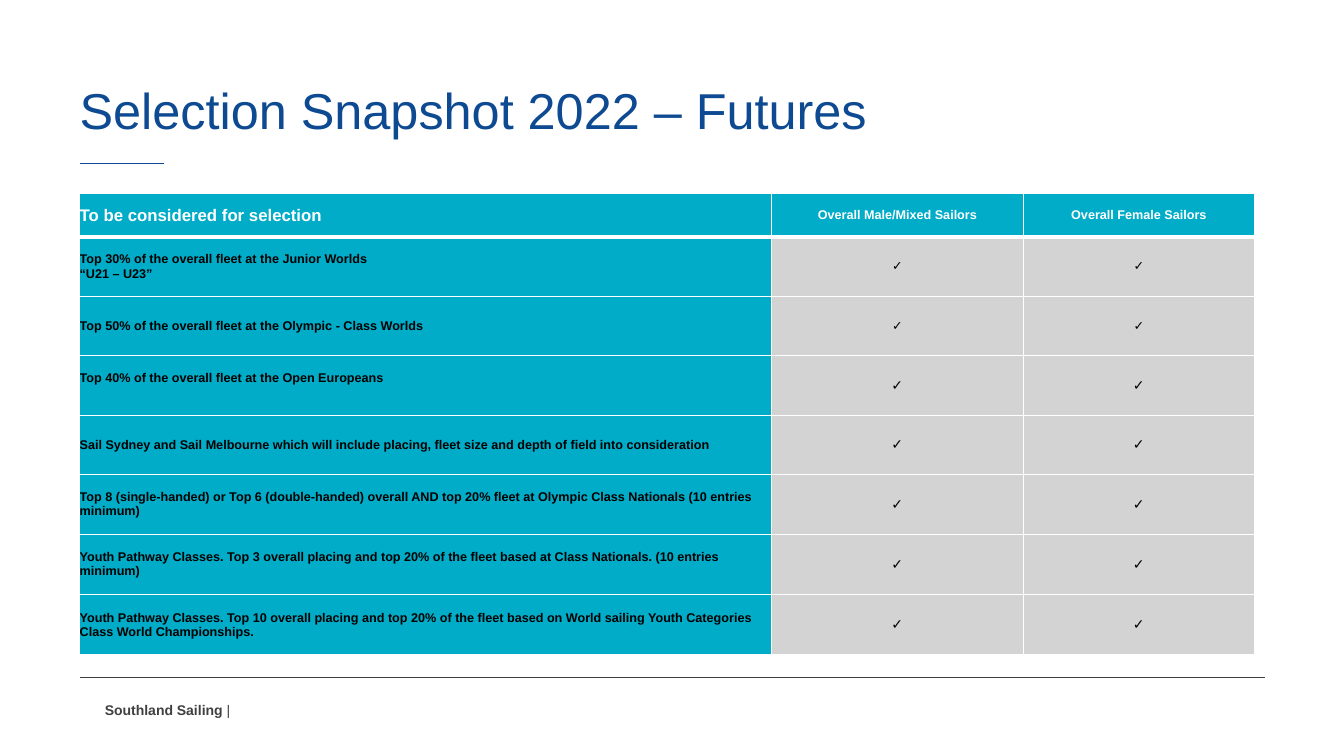
from lxml import etree
from pptx import Presentation
from pptx.dml.color import RGBColor
from pptx.enum.shapes import MSO_CONNECTOR
from pptx.enum.text import MSO_ANCHOR, PP_ALIGN
from pptx.oxml.ns import qn
from pptx.util import Inches, Pt

STRAIGHT = MSO_CONNECTOR.STRAIGHT
MIDDLE, BOTTOM = MSO_ANCHOR.MIDDLE, MSO_ANCHOR.BOTTOM
LEFT, CENTER = PP_ALIGN.LEFT, PP_ALIGN.CENTER

NAVY, TEAL, GREY, CHARCOAL = "0D4A91", "00ACC8", "D3D3D3", "404042"
WHITE, BLACK = "FFFFFF", "000000"

MARGIN = 0.79
CONTENT_WIDTH = 11.76
COLUMN_WIDTHS = [6.86, 2.5, 2.29]
HEADER_HEIGHT = 0.43
HEADERS = ["To be considered for selection", "Overall Male/Mixed Sailors",
           "Overall Female Sailors"]

# Each criterion: lines of text, row height, check mark size, bottom inset
CRITERIA = [
    (["Top 30% of the overall fleet at the Junior Worlds", "“U21 – U23”"], 0.59, 9, 0),
    (["Top 50% of the overall fleet at the Olympic - Class Worlds"], 0.59, 9, 0),
    (["Top 40% of the overall fleet at the Open Europeans"], 0.59, 10, 0.14),
    (["Sail Sydney and Sail Melbourne which will include placing, fleet size "
      "and depth of field into consideration"], 0.59, 10, 0),
    (["Top 8 (single-handed) or Top 6 (double-handed) overall AND top 20% fleet "
      "at Olympic Class Nationals (10 entries minimum)"], 0.59, 10, 0),
    (["Youth Pathway Classes. Top 3 overall placing and top 20% of the fleet "
      "based at Class Nationals. (10 entries minimum)"], 0.6, 10, 0),
    (["Youth Pathway Classes. Top 10 overall placing and top 20% of the fleet "
      "based on World sailing Youth Categories Class World Championships."], 0.6, 10, 0),
]


def rgb(value):
    return RGBColor.from_string(value)


class SlideBuilder:
    font = "Arial"

    def __init__(self, slide):
        self.slide = slide

    def add_run(self, paragraph, text, size, color, bold=False):
        run = paragraph.add_run()
        run.text = text
        run.font.name = self.font
        run.font.size = Pt(size)
        run.font.bold = bold
        run.font.color.rgb = rgb(color)

    def text_box(self, left, top, width, height, runs, anchor, spacing=1.0, wrap=True):
        shape = self.slide.shapes.add_textbox(
            Inches(left), Inches(top), Inches(width), Inches(height))
        frame = shape.text_frame
        frame.word_wrap = wrap
        frame.vertical_anchor = anchor
        frame.margin_left = frame.margin_right = 0
        frame.margin_top = frame.margin_bottom = 0
        paragraph = frame.paragraphs[0]
        paragraph.line_spacing = spacing
        for run in runs:
            self.add_run(paragraph, *run)

    def rule(self, left, top, width, color, weight):
        line = self.slide.shapes.add_connector(
            STRAIGHT, Inches(left), Inches(top), Inches(left + width), Inches(top))
        line.line.color.rgb = rgb(color)
        line.line.width = Pt(weight)
        etree.SubElement(line.element.spPr, qn("a:effectLst"))

    def table(self, left, top, widths, heights):
        frame = self.slide.shapes.add_table(
            len(heights), len(widths), Inches(left), Inches(top),
            Inches(sum(widths)), Inches(sum(heights)))
        table = frame.table
        for column, width in zip(table.columns, widths):
            column.width = Inches(width)
        for row, height in zip(table.rows, heights):
            row.height = Inches(height)
        return table

    def cell(self, cell, lines, size, color, fill, align=LEFT, inset=0,
             top_border=1, bottom_border=1):
        cell.margin_left = cell.margin_right = cell.margin_top = 0
        cell.margin_bottom = Inches(inset)
        cell.vertical_anchor = MIDDLE
        frame = cell.text_frame
        for index, text in enumerate(lines):
            paragraph = frame.add_paragraph() if index else frame.paragraphs[0]
            paragraph.alignment = align
            self.add_run(paragraph, text, size, color, bold=True)
        # Borders come before the fill in the cell properties
        properties = cell._tc.get_or_add_tcPr()
        for side, weight in (("L", 1), ("R", 1), ("T", top_border), ("B", bottom_border)):
            border = etree.SubElement(properties, qn(f"a:ln{side}"), w=str(Pt(weight)))
            solid = etree.SubElement(border, qn("a:solidFill"))
            etree.SubElement(solid, qn("a:srgbClr"), val=WHITE)
        cell.fill.solid()
        cell.fill.fore_color.rgb = rgb(fill)


def main():
    presentation = Presentation()
    presentation.slide_width = Inches(13.33)
    presentation.slide_height = Inches(7.5)
    builder = SlideBuilder(presentation.slides.add_slide(presentation.slide_layouts[6]))

    # Footer
    builder.text_box(1.04, 6.96, 1.68, 0.17,
                     [("Southland Sailing", 10, CHARCOAL, True), (" |", 10, CHARCOAL)],
                     MIDDLE, wrap=False)
    builder.rule(MARGIN, 6.72, CONTENT_WIDTH, CHARCOAL, 0.25)

    # Title
    builder.rule(MARGIN, 1.62, 0.84, NAVY, 1)
    builder.text_box(MARGIN, 0.21, CONTENT_WIDTH, 1.18,
                     [("Selection Snapshot 2022 – Futures", 36, NAVY)], BOTTOM, 0.85)

    # Selection table
    heights = [HEADER_HEIGHT] + [height for _, height, _, _ in CRITERIA]
    table = builder.table(MARGIN, 1.92, COLUMN_WIDTHS, heights)
    for column, header in enumerate(HEADERS):
        builder.cell(table.cell(0, column), [header], 9 if column else 12, WHITE, TEAL,
                     CENTER if column else LEFT, bottom_border=3)
    for row, (lines, _, check_size, inset) in enumerate(CRITERIA, start=1):
        top_border = 3 if row == 1 else 1
        builder.cell(table.cell(row, 0), lines, 9, BLACK, TEAL, inset=inset,
                     top_border=top_border)
        for column in (1, 2):
            builder.cell(table.cell(row, column), ["✓"], check_size, BLACK, GREY, CENTER,
                         top_border=top_border)

    presentation.save("out.pptx")


if __name__ == "__main__":
    main()
